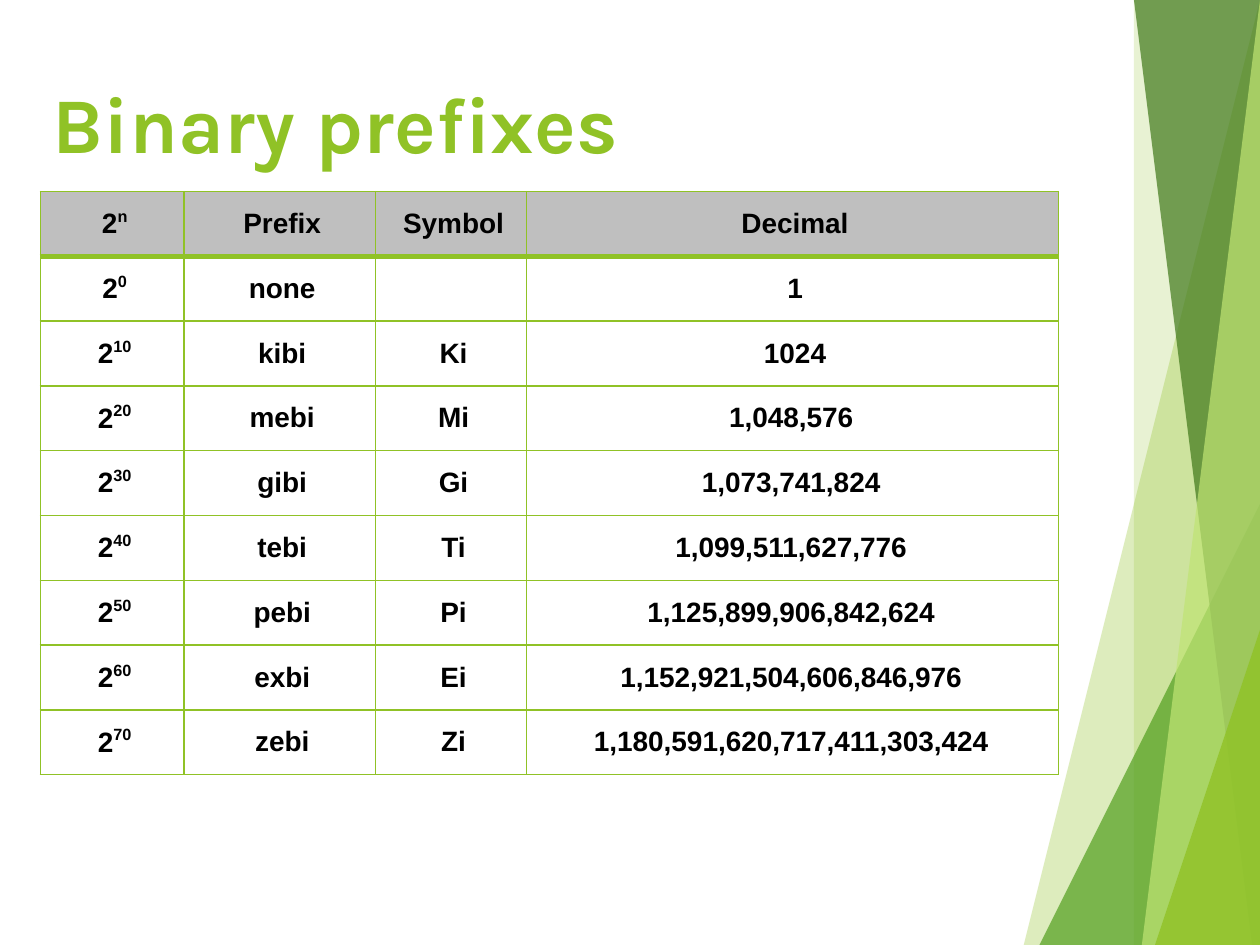
from dataclasses import dataclass

from lxml import etree
from pptx import Presentation
from pptx.dml.color import RGBColor
from pptx.enum.text import MSO_ANCHOR, PP_ALIGN
from pptx.oxml.ns import qn
from pptx.util import Inches, Pt

MIDDLE = MSO_ANCHOR.MIDDLE
LEFT, CENTER = PP_ALIGN.LEFT, PP_ALIGN.CENTER

LIME = RGBColor(0x90, 0xC2, 0x26)
GREEN = RGBColor(0x54, 0xA0, 0x21)
DARK_GREEN = RGBColor(0x3F, 0x78, 0x19)
PALE_LIME = RGBColor(0xC0, 0xE4, 0x74)
GRAY = RGBColor(0xBF, 0xBF, 0xBF)
BLACK = RGBColor(0, 0, 0)

TITLE_FONT = {"name": "Karla", "size": Pt(45), "bold": True}
CELL_FONT = {"name": "Arial", "size": Pt(16), "bold": True}
CELL_FORMAT = {
    "vertical_anchor": MIDDLE,
    "margin_left": Inches(0.06),
    "margin_right": Inches(0.06),
    "margin_top": Inches(0.06),
    "margin_bottom": Inches(0.06),
}
THIN, THICK = Pt(1), Pt(3)


@dataclass
class Facet:
    points: list[tuple[float, float]]
    color: RGBColor
    opacity: int


@dataclass
class PrefixRow:
    exponent: str
    prefix: str
    symbol: str
    decimal: str


FACETS = [
    Facet([(9.85, 0), (8.44, 7.5), (10, 7.5), (10, 0)], LIME, 30),
    Facet([(8.66, 0), (9.49, 7.5), (10, 7.5), (10, 0)], LIME, 20),
    Facet([(8.26, 7.5), (10, 4.29), (10, 7.5)], GREEN, 72),
    Facet([(8.52, 0), (9.81, 7.5), (10, 7.5), (10, 0)], DARK_GREEN, 70),
    Facet([(9.88, 0), (9.42, 7.5), (10, 7.5), (10, 0)], PALE_LIME, 70),
    Facet([(9.25, 7.5), (10, 5.35), (10, 7.5)], LIME, 80),
]

COLUMN_WIDTHS = [1.14, 1.52, 1.2, 4.22]
ROWS = [
    PrefixRow("n", "Prefix", "Symbol", "Decimal"),
    PrefixRow("0", "none", "", "1"),
    PrefixRow("10", "kibi", "Ki", "1024"),
    PrefixRow("20", "mebi", "Mi", "1,048,576 "),
    PrefixRow("30", "gibi", "Gi", "1,073,741,824 "),
    PrefixRow("40", "tebi", "Ti", "1,099,511,627,776 "),
    PrefixRow("50", "pebi", "Pi", "1,125,899,906,842,624 "),
    PrefixRow("60", "exbi", "Ei", "1,152,921,504,606,846,976 "),
    PrefixRow("70", "zebi", "Zi", "1,180,591,620,717,411,303,424 "),
]


def apply_format(target, values: dict) -> None:
    for name, value in values.items():
        setattr(target, name, value)


def format_font(font, values: dict, color: RGBColor) -> None:
    apply_format(font, values)
    font.color.rgb = color


def draw_facet(slide, facet: Facet) -> None:
    start, *others = facet.points
    builder = slide.shapes.build_freeform(*start, scale=Inches(1))
    builder.add_line_segments(others, close=True)
    shape = builder.convert_to_shape()
    shape.shadow.inherit = False
    shape.line.fill.background()
    shape.fill.solid()
    shape.fill.fore_color.rgb = facet.color
    color = shape.fill._xPr.find(qn("a:solidFill"))[0]
    etree.SubElement(color, qn("a:alpha"), val=str(facet.opacity * 1000))


def draw_title(slide, text: str) -> None:
    title = slide.shapes.title
    apply_format(title, {"left": Inches(0.32), "top": Inches(0.37),
                         "width": Inches(7.94), "height": Inches(1.19)})
    title.text_frame.vertical_anchor = MIDDLE
    paragraph = title.text_frame.paragraphs[0]
    paragraph.alignment = LEFT
    run = paragraph.add_run()
    run.text = text
    format_font(run.font, TITLE_FONT, LIME)


def set_borders(cell, widths: dict[str, int]) -> None:
    properties = cell._tc.get_or_add_tcPr()
    for position, (side, width) in enumerate(widths.items()):
        line = etree.Element(qn(f"a:ln{side}"), w=str(width))
        fill = etree.SubElement(line, qn("a:solidFill"))
        etree.SubElement(fill, qn("a:srgbClr"), val=str(LIME))
        properties.insert(position, line)


def write_cell(cell, text: str, superscript: str = "") -> None:
    apply_format(cell, CELL_FORMAT)
    paragraph = cell.text_frame.paragraphs[0]
    paragraph.alignment = CENTER
    paragraph._p.get_or_add_pPr().set("marL", str(Inches(0.04)))
    format_font(paragraph.font, CELL_FONT, BLACK)
    for content, baseline in ((text, 0), (superscript, 40)):
        if content:
            run = paragraph.add_run()
            run.text = content
            format_font(run.font, CELL_FONT, BLACK)
            if baseline:
                run.font._element.set("baseline", str(baseline * 1000))


def draw_table(slide, rows: list[PrefixRow]) -> None:
    table = slide.shapes.add_table(
        len(rows), len(COLUMN_WIDTHS),
        Inches(0.32), Inches(1.52), Inches(8.08), Inches(4.63)).table
    apply_format(table, {"first_row": False, "horz_banding": False})
    for column, width in zip(table.columns, COLUMN_WIDTHS):
        column.width = Inches(width)

    for index, row in enumerate(rows):
        cells = table.rows[index].cells
        for cell in cells:
            if index == 0:
                cell.fill.solid()
                cell.fill.fore_color.rgb = GRAY
            else:
                cell.fill.background()
            # The heavy rule lies between the header and the first row
            set_borders(cell, {"L": THIN, "R": THIN,
                               "T": THICK if index == 1 else THIN,
                               "B": THICK if index == 0 else THIN})
        power, *others = cells
        write_cell(power, "2", row.exponent)
        for cell, text in zip(others, (row.prefix, row.symbol, row.decimal)):
            write_cell(cell, text)


def main() -> None:
    presentation = Presentation()
    presentation.slide_width = Inches(10)
    presentation.slide_height = Inches(7.5)
    slide = presentation.slides.add_slide(presentation.slide_layouts[5])

    # Overlapping green facets along the right edge
    for facet in FACETS:
        draw_facet(slide, facet)

    # Title and table of prefixes
    draw_title(slide, "Binary prefixes")
    draw_table(slide, ROWS)
    presentation.save("out.pptx")


if __name__ == "__main__":
    main()
